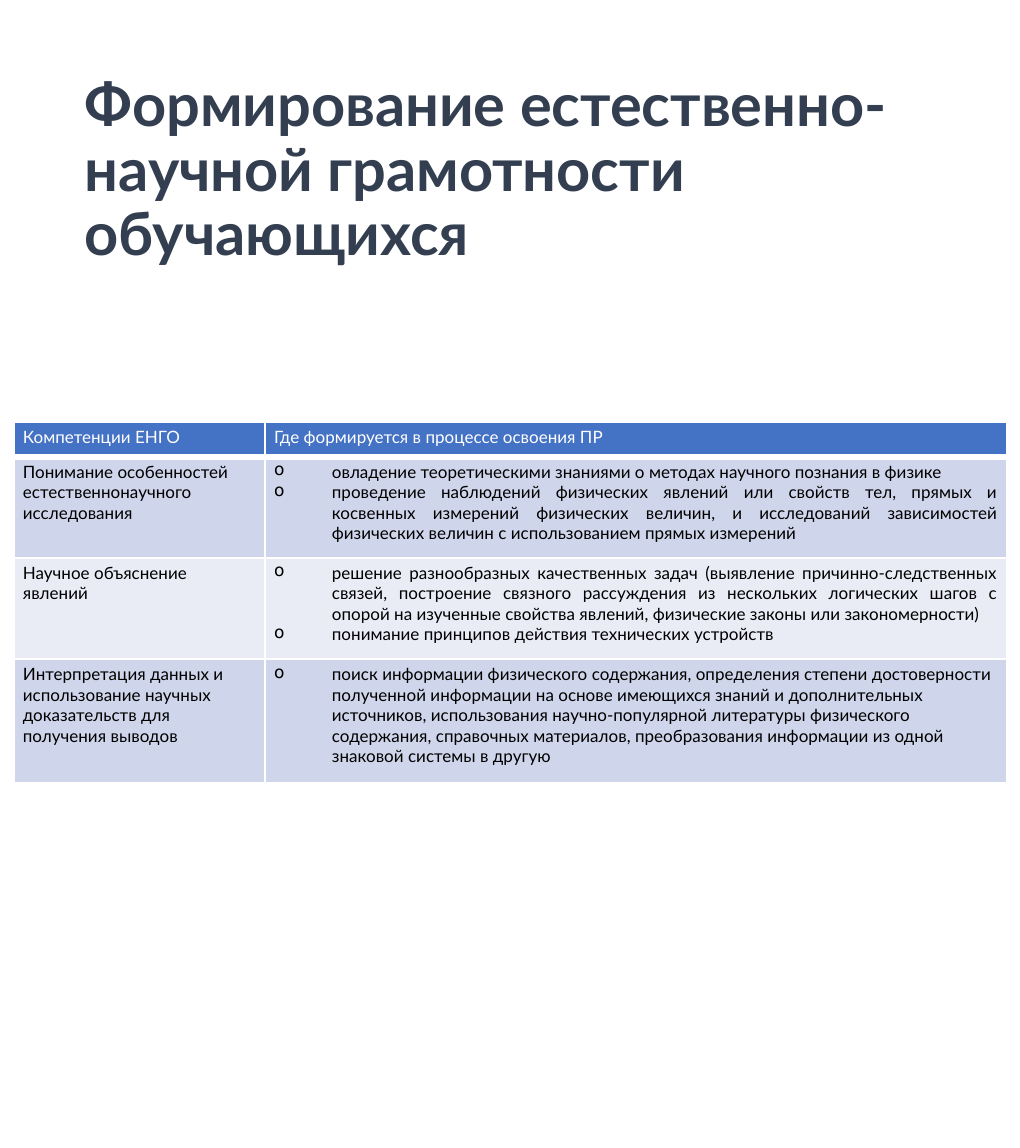
from dataclasses import dataclass

from lxml.etree import SubElement
from pptx import Presentation
from pptx.dml.color import RGBColor as Rgb
from pptx.enum.text import MSO_ANCHOR as Anchor, PP_ALIGN as Align
from pptx.oxml.ns import qn
from pptx.util import Cm, Pt


@dataclass(frozen=True)
class Theme:
    font: str = "Lato"
    title_size: int = 28
    table_size: int = 8
    title_ink: str = "333F50"
    header_ink: str = "FFFFFF"
    body_ink: str = "000000"
    header_fill: str = "4472C4"
    bands: tuple = ("CFD5EA", "E9EBF5")
    rule: str = "FFFFFF"


THEME = Theme()
TITLE = "Формирование естественно-научной грамотности обучающихся"
HEADINGS = ("Компетенции ЕНГО", "Где формируется в процессе освоения ПР")
COMPETENCES = (
    ("Понимание особенностей естественнонаучного исследования", Align.JUSTIFY, (
        "овладение теоретическими знаниями о методах научного познания в физике",
        "проведение наблюдений физических явлений или свойств тел, прямых и косвенных "
        "измерений физических величин, и исследований зависимостей физических величин "
        "с использованием прямых измерений",
    )),
    ("Научное объяснение явлений", Align.JUSTIFY, (
        "решение разнообразных качественных задач (выявление причинно-следственных "
        "связей, построение связного рассуждения из нескольких логических шагов "
        "с опорой на изученные свойства явлений, физические законы или закономерности)",
        "понимание принципов действия технических устройств",
    )),
    ("Интерпретация данных и использование научных доказательств для получения выводов",
     Align.LEFT, (
        "поиск информации физического содержания, определения степени достоверности "
        "полученной информации на основе имеющихся знаний и дополнительных источников, "
        "использования научно-популярной литературы физического содержания, справочных "
        "материалов, преобразования информации из одной знаковой системы в другую",
    )),
)
COLUMN_WIDTHS = (4.17, 12.32)
ROW_HEIGHTS = (0.58, 1.68, 1.68, 2.05)
CELL_FORMAT = {
    "margin_left": Cm(0.15),
    "margin_right": Cm(0.15),
    "margin_top": Cm(0.08),
    "margin_bottom": Cm(0.08),
    "vertical_anchor": Anchor.TOP,
}


def apply_format(target, values):
    for name, value in values.items():
        setattr(target, name, value)


def write(paragraph, text, size, ink, bold=False):
    run = paragraph.add_run()
    run.text = text
    apply_format(run.font, {"name": THEME.font, "size": Pt(size), "bold": bold})
    run.font.color.rgb = Rgb.from_string(ink)


def add_bullet(paragraph):
    properties = paragraph._p.get_or_add_pPr()
    indent = Cm(0.96)
    properties.set("marL", str(indent))
    properties.set("indent", str(-indent))
    SubElement(properties, qn("a:buChar"), char="o")


def add_borders(cell, bottom):
    properties = cell._tc.get_or_add_tcPr()
    widths = {"lnL": 1, "lnR": 1, "lnT": 1, "lnB": bottom}
    for position, (side, width) in enumerate(widths.items()):
        border = SubElement(properties, qn(f"a:{side}"), w=str(Pt(width)))
        properties.insert(position, border)
        fill = SubElement(border, qn("a:solidFill"))
        SubElement(fill, qn("a:srgbClr"), val=THEME.rule)


def fill_cell(cell, texts, ink, fill, align=Align.LEFT, bulleted=False, bottom=1):
    apply_format(cell, CELL_FORMAT)
    cell.fill.solid()
    cell.fill.fore_color.rgb = Rgb.from_string(fill)
    add_borders(cell, bottom)
    frame = cell.text_frame
    for index, text in enumerate(texts):
        paragraph = frame.add_paragraph() if index else frame.paragraphs[0]
        paragraph.alignment = align
        if bulleted:
            add_bullet(paragraph)
        write(paragraph, text, THEME.table_size, ink)


def add_title(slide, left, top, width, height):
    frame = slide.shapes.add_textbox(left, top, width, height).text_frame
    apply_format(frame, {"word_wrap": True, "vertical_anchor": Anchor.MIDDLE})
    heading = frame.paragraphs[0]
    heading.line_spacing = 0.9
    write(heading, TITLE, THEME.title_size, THEME.title_ink, bold=True)


def add_competences(slide, left, top, width, height):
    table = slide.shapes.add_table(
        len(COMPETENCES) + 1, len(HEADINGS), left, top, width, height
    ).table
    for column, share in zip(table.columns, COLUMN_WIDTHS):
        column.width = int(width * share / sum(COLUMN_WIDTHS))
    for row, share in zip(table.rows, ROW_HEIGHTS):
        row.height = int(height * share / sum(ROW_HEIGHTS))
    for column, heading in enumerate(HEADINGS):
        fill_cell(table.cell(0, column), [heading],
                  THEME.header_ink, THEME.header_fill, bottom=3)
    for row, (competence, align, activities) in enumerate(COMPETENCES, start=1):
        band = THEME.bands[(row - 1) % len(THEME.bands)]
        fill_cell(table.cell(row, 0), [competence], THEME.body_ink, band)
        fill_cell(table.cell(row, 1), activities, THEME.body_ink, band,
                  align, bulleted=True)


def main():
    deck = Presentation()
    apply_format(deck, {"slide_width": Cm(16.93), "slide_height": Cm(19.05)})
    slide = deck.slides.add_slide(deck.slide_layouts[6])
    add_title(slide, Cm(1.16), Cm(1.01), Cm(14.6), Cm(3.68))
    add_competences(slide, Cm(0.23), Cm(7), Cm(sum(COLUMN_WIDTHS)), Cm(sum(ROW_HEIGHTS)))
    deck.save("out.pptx")


if __name__ == "__main__":
    main()
